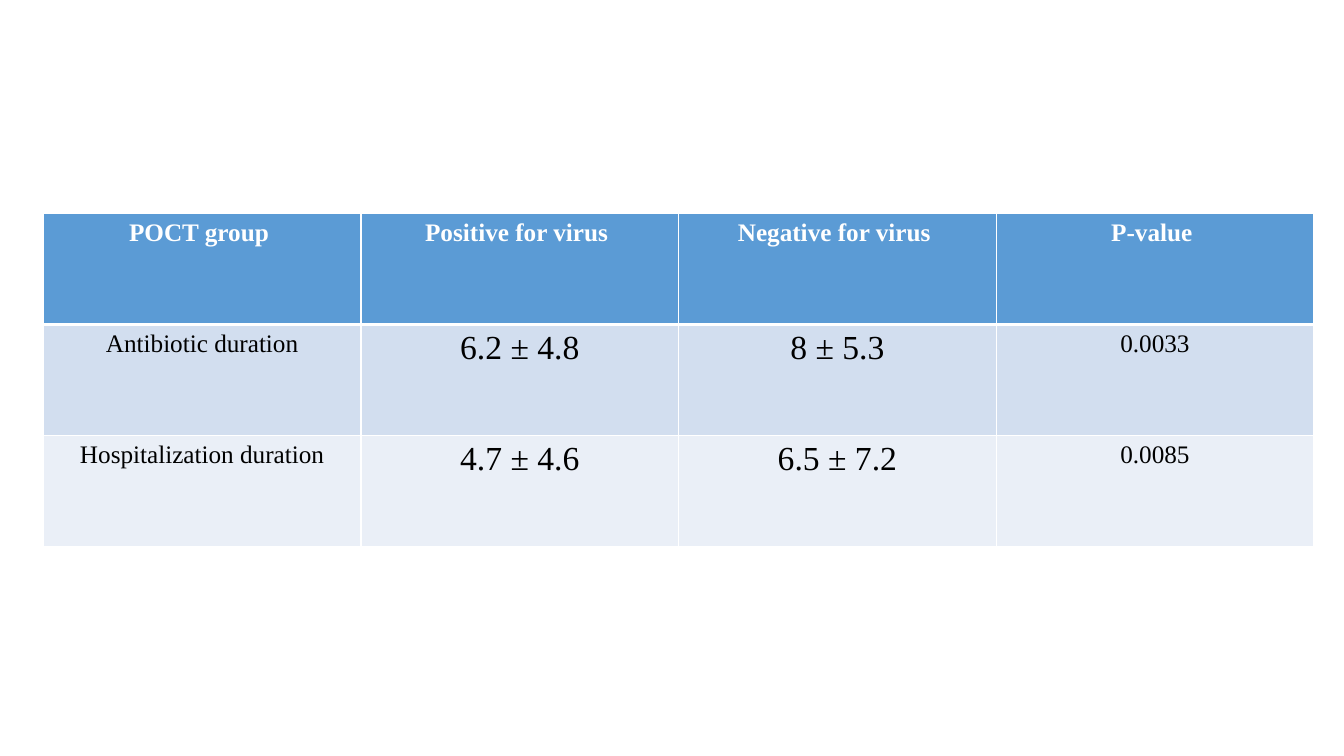
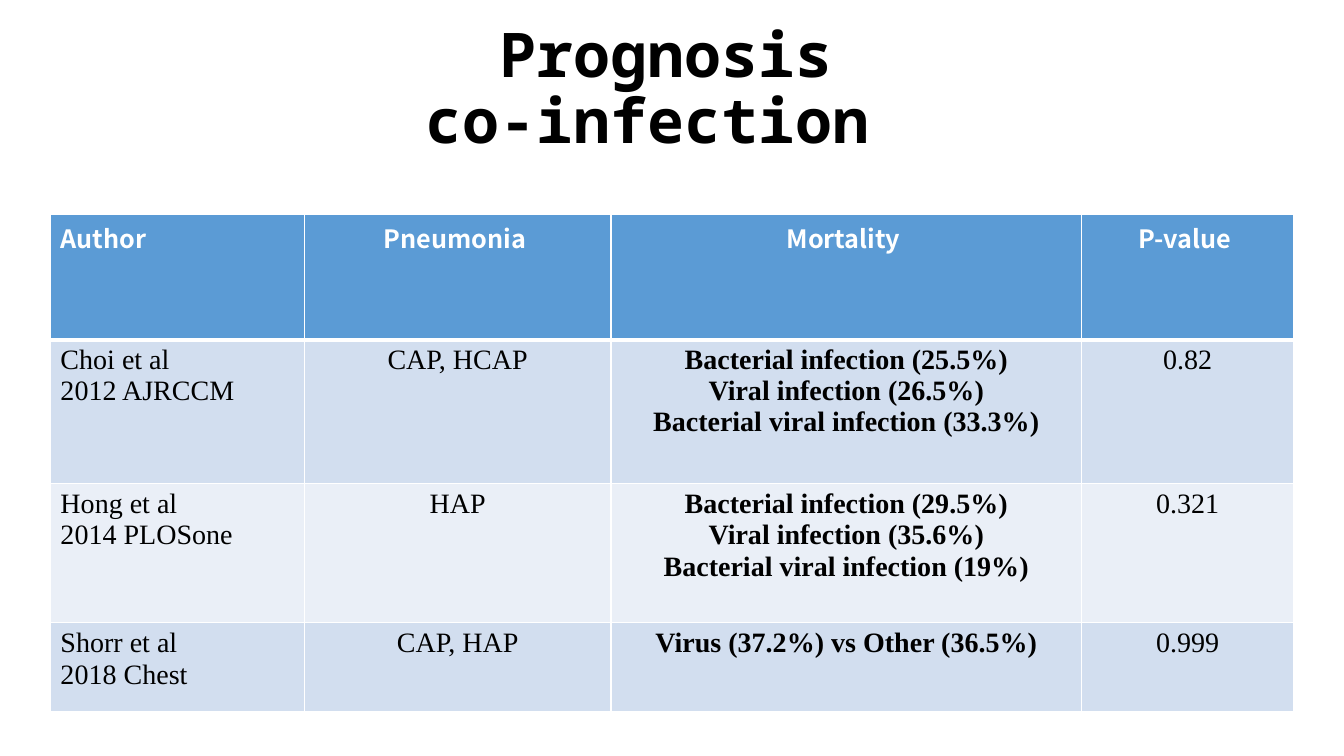
from dataclasses import dataclass

from lxml.etree import SubElement
from pptx import Presentation
from pptx.dml.color import RGBColor
from pptx.enum.text import MSO_ANCHOR, PP_ALIGN
from pptx.oxml.ns import qn
from pptx.util import Emu, Pt

PX = 9144


@dataclass(frozen=True)
class Theme:
    """Colours, fonts, type sizes and rule widths shared by the slides."""
    ink: str = "000000"
    paper: str = "FFFFFF"
    header: str = "5B9BD5"
    bands: tuple = ("D2DEEF", "EAEFF7")
    serif: str = "Times New Roman"
    sans: str = "Noto Sans CJK KR"
    mono: str = "Noto Sans Mono"
    title_size: int = 44
    figure_size: int = 24
    body_size: int = 20
    label_size: int = 18
    rule: int = 1
    header_rule: int = 3


def px(*lengths):
    """Turn whole pixels into EMU."""
    return [Emu(length * PX) for length in lengths]


def write(frame, text, *, font, size, color, bold=False, align=PP_ALIGN.CENTER, spacing=None):
    """Fill a text frame with one formatted paragraph per line of text."""
    for index, line in enumerate(text.split("\n")):
        para = frame.add_paragraph() if index else frame.paragraphs[0]
        para.text = line
        para.alignment = align
        if spacing:
            para.line_spacing = spacing
        for span in para.runs:
            span.font.name = font
            span.font.size = Pt(size)
            span.font.bold = bold
            span.font.color.rgb = RGBColor.from_string(color)


class Pages:
    """Draws styled elements on the current slide of a deck."""

    def __init__(self, theme):
        self.theme = theme
        self.deck = Presentation()
        self.deck.slide_width, self.deck.slide_height = px(1333, 750)
        self.page = None

    def start(self):
        """Add a blank page and make it current."""
        self.page = self.deck.slides.add_slide(self.deck.slide_layouts[6])
        self.page.background.fill.solid()
        self.page.background.fill.fore_color.rgb = RGBColor.from_string(self.theme.paper)

    def title(self, text, bounds):
        """Place the centred page title."""
        frame = self.page.shapes.add_textbox(*px(*bounds)).text_frame
        frame.word_wrap = True
        frame.vertical_anchor = MSO_ANCHOR.MIDDLE
        write(frame, text, font=self.theme.mono, size=self.theme.title_size,
              color=self.theme.ink, bold=True, spacing=0.9)

    def border(self, cell, **widths):
        """Rule the sides of a cell, with widths in points."""
        properties = cell._tc.get_or_add_tcPr()
        for side, width in widths.items():
            line = SubElement(properties, qn(f"a:ln{side}"), w=str(Pt(width)))
            fill = SubElement(line, qn("a:solidFill"))
            SubElement(fill, qn("a:srgbClr"), val=self.theme.paper)

    def table(self, origin, widths, heights, rows, header_font, columns):
        """Draw a banded table whose body columns each have a text format."""
        theme = self.theme
        bounds = px(*origin, sum(widths), sum(heights))
        table = self.page.shapes.add_table(len(rows), len(widths), *bounds).table
        table.horz_banding = False
        for column, width in zip(table.columns, px(*widths)):
            column.width = width
        for row, height in zip(table.rows, px(*heights)):
            row.height = height
        for index, texts in enumerate(rows):
            is_header = index == 0
            fill = theme.header if is_header else theme.bands[(index - 1) % 2]
            top = theme.header_rule if index == 1 else theme.rule
            bottom = theme.header_rule if is_header else theme.rule
            for place, (text, column) in enumerate(zip(texts, columns)):
                cell = table.cell(index, place)
                self.border(cell, L=theme.rule, R=theme.rule, T=top, B=bottom)
                cell.fill.solid()
                cell.fill.fore_color.rgb = RGBColor.from_string(fill)
                style = {"font": theme.serif, "color": theme.ink} | column
                if is_header:
                    style |= {"font": header_font, "size": theme.label_size,
                              "color": theme.paper, "bold": True}
                write(cell.text_frame, text, **style)


def main():
    """Build and save the two pages."""
    theme = Theme()
    pages = Pages(theme)

    label, figure = {"size": theme.label_size}, {"size": theme.figure_size}
    pages.start()
    pages.table(
        (43, 212), [315] * 4, [110] * 3,
        [("POCT group ", "Positive for virus ", "Negative for virus ", "P-value "),
         ("Antibiotic duration", "6.2 ± 4.8", "8 ± 5.3", "0.0033"),
         ("Hospitalization duration", "4.7 ± 4.6", "6.5 ± 7.2", "0.0085")],
        theme.serif, [label, figure, figure, label])

    body = {"size": theme.body_size}
    author, mortality = body | {"align": PP_ALIGN.LEFT}, body | {"bold": True}
    pages.start()
    pages.title("Prognosis\vco-infection ", (177, 12, 967, 156))
    pages.table(
        (50, 213), [252, 304, 467, 210], [124, 143, 138, 88],
        [("Author", "Pneumonia ", "Mortality ", "P-value "),
         ("Choi et al\n2012 AJRCCM", "CAP, HCAP",
          "Bacterial infection (25.5%)\nViral infection (26.5%)\n"
          "Bacterial viral infection (33.3%)", "0.82"),
         ("Hong et al\n2014 PLOSone", "HAP",
          "Bacterial infection (29.5%)\nViral infection (35.6%)\n"
          "Bacterial viral infection (19%)", "0.321"),
         ("Shorr et al\n2018 Chest", "CAP, HAP", "Virus (37.2%) vs Other (36.5%)", "0.999")],
        theme.sans, [author, body, mortality, body])

    pages.deck.save("out.pptx")


if __name__ == "__main__":
    main()
